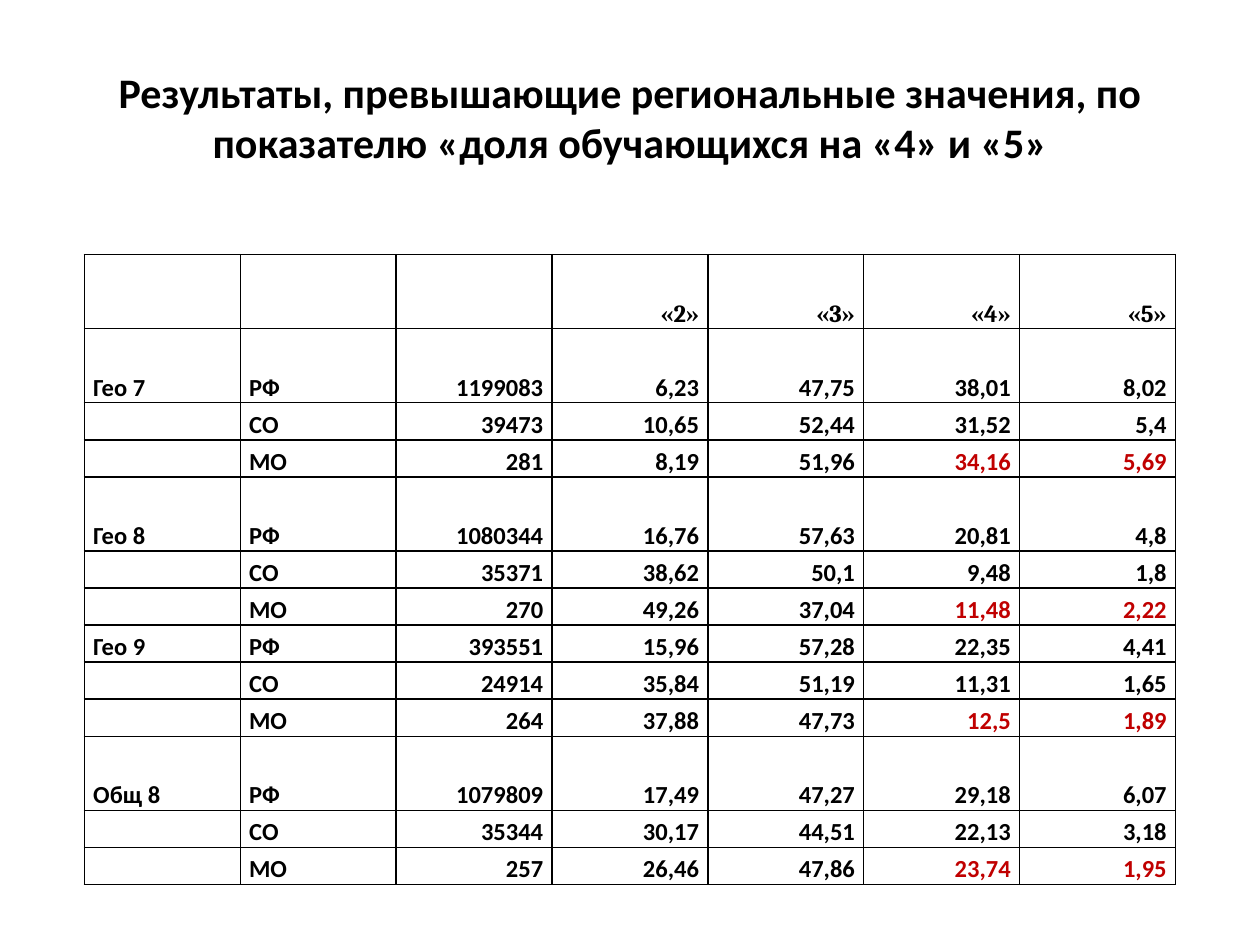
from lxml import etree
from pptx import Presentation
from pptx.dml.color import RGBColor
from pptx.enum.text import MSO_ANCHOR, PP_ALIGN
from pptx.oxml.ns import qn
from pptx.util import Inches, Pt

LEFT, CENTER, RIGHT = PP_ALIGN.LEFT, PP_ALIGN.CENTER, PP_ALIGN.RIGHT
MIDDLE, BOTTOM = MSO_ANCHOR.MIDDLE, MSO_ANCHOR.BOTTOM
BLACK = RGBColor(0x00, 0x00, 0x00)
RED = RGBColor(0xC0, 0x00, 0x00)

TITLE = "Результаты, превышающие региональные значения, по показателю «доля обучающихся на «4» и «5»"
HEADER = ["", "", "", "«2»", "«3»", "«4»", "«5»"]
REGIONS = ["РФ", "СО", "МО"]
RESULTS = {
    "Гео 7": ["1199083 6,23 47,75 38,01 8,02",
              "39473 10,65 52,44 31,52 5,4",
              "281 8,19 51,96 34,16 5,69"],
    "Гео 8": ["1080344 16,76 57,63 20,81 4,8",
              "35371 38,62 50,1 9,48 1,8",
              "270 49,26 37,04 11,48 2,22"],
    "Гео 9": ["393551 15,96 57,28 22,35 4,41",
              "24914 35,84 51,19 11,31 1,65",
              "264 37,88 47,73 12,5 1,89"],
    "Общ 8": ["1079809 17,49 47,27 29,18 6,07",
              "35344 30,17 44,51 22,13 3,18",
              "257 26,46 47,86 23,74 1,95"],
}
TALL_ROWS = {0, 1, 4, 10}


class Deck:
    """Holds the text style and the current slide, and adds elements to it."""

    font, head_font = "Calibri", "Cambria"
    title_size, cell_size = Pt(24), Pt(14)

    def __init__(self, prs):
        self.s = prs.slides.add_slide(prs.slide_layouts[6])

    def run(self, p, text, size, font, color=BLACK):
        r = p.add_run()
        r.text = text
        r.font.name, r.font.size, r.font.bold = font, size, True
        r.font.color.rgb = color

    def title(self, text, x, y, w, h):
        tf = self.s.shapes.add_textbox(Inches(x), Inches(y), Inches(w), Inches(h)).text_frame
        tf.word_wrap = True
        tf.vertical_anchor = MIDDLE
        p = tf.paragraphs[0]
        p.alignment = CENTER
        self.run(p, text, self.title_size, self.font)

    def borders(self, cell):
        tcPr = cell._tc.get_or_add_tcPr()
        for side in ("a:lnL", "a:lnR", "a:lnT", "a:lnB"):
            ln = etree.SubElement(tcPr, qn(side), w=str(Pt(1)))
            fill = etree.SubElement(ln, qn("a:solidFill"))
            etree.SubElement(fill, qn("a:srgbClr"), val=str(BLACK))

    def cell(self, cell, text, align, font, color):
        self.borders(cell)
        cell.fill.background()
        cell.vertical_anchor = BOTTOM
        cell.margin_left = cell.margin_right = Inches(0.07)
        cell.margin_top = cell.margin_bottom = 0
        p = cell.text_frame.paragraphs[0]
        p.alignment = align
        p.line_spacing = 1.15
        if text:
            self.run(p, text, self.cell_size, font, color)
        else:
            etree.SubElement(p._p, qn("a:endParaRPr"), sz=str(self.cell_size.centipoints))

    def table(self, rows, x, y, w, h):
        n_cols = len(rows[0])
        tbl = self.s.shapes.add_table(len(rows), n_cols, Inches(x), Inches(y), Inches(w), Inches(h)).table
        tbl.first_row = tbl.horz_banding = False
        unit = h / (len(rows) + len(TALL_ROWS))
        for col in tbl.columns:
            col.width = Inches(w / n_cols)
        for i, row in enumerate(rows):
            tbl.rows[i].height = Inches(unit * (2 if i in TALL_ROWS else 1))
            for j, text in enumerate(row):
                self.cell(tbl.cell(i, j), text,
                          LEFT if j < 2 else RIGHT,
                          self.head_font if i == 0 else self.font,
                          RED if row[1] == "МО" and j > 4 else BLACK)


def main():
    prs = Presentation()
    prs.slide_width, prs.slide_height = Inches(10), Inches(7.5)
    rows = [HEADER]
    for subject, lines in RESULTS.items():
        for k, (region, line) in enumerate(zip(REGIONS, lines)):
            rows.append([subject if k == 0 else "", region, *line.split()])
    deck = Deck(prs)
    deck.title(TITLE, 0.5, 0.3, 9, 1.25)
    deck.table(rows, 0.67, 2.02, 8.66, 5)
    prs.save("out.pptx")


if __name__ == "__main__":
    main()
